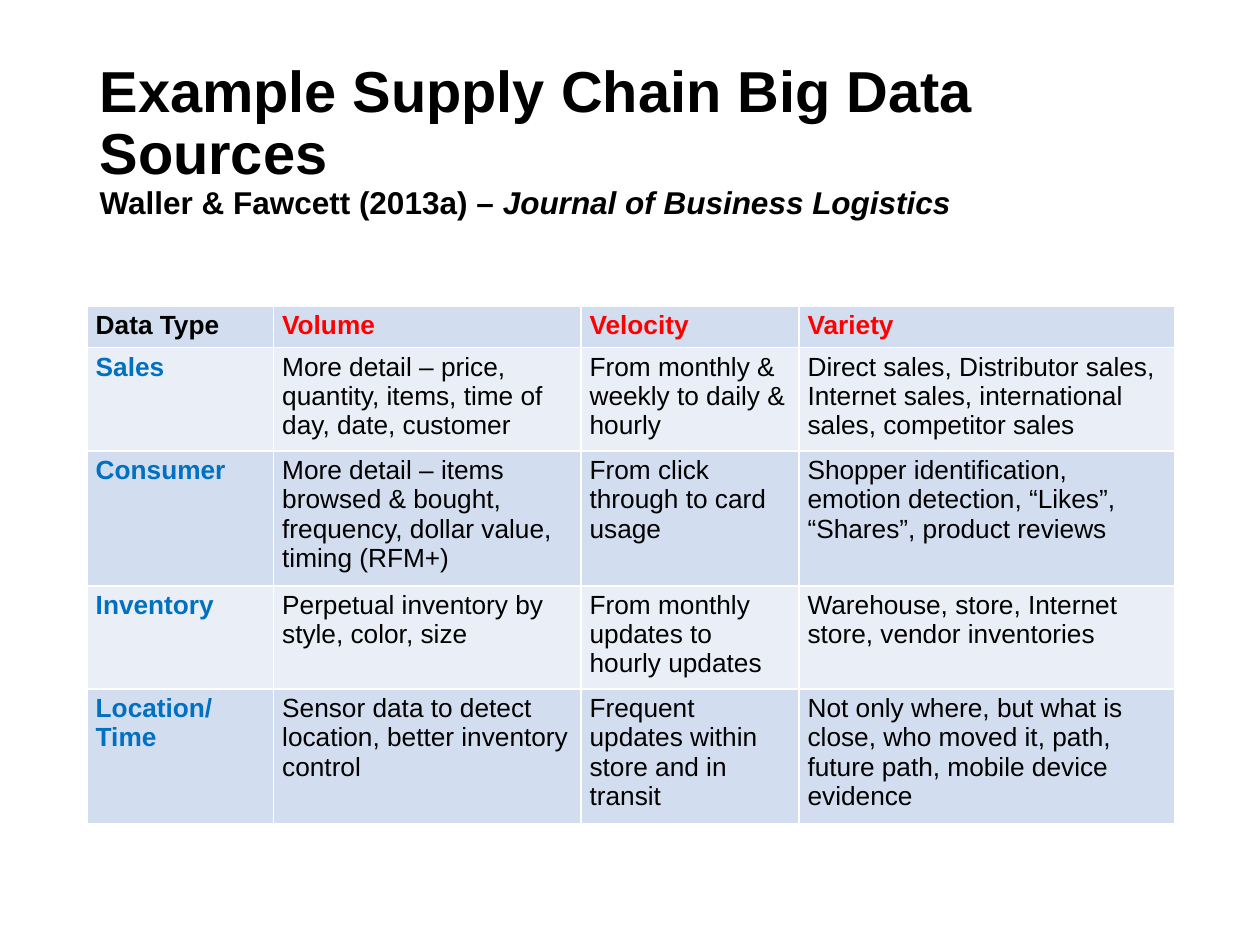
import pptx
import pptx.util
import pptx.dml.color
import pptx.enum.text
from dataclasses import dataclass
from lxml import etree


@dataclass(frozen=True)
class Theme:
    font: str = "Arial"
    title_size: int = 33
    source_size: int = 18
    table_size: int = 15
    ink: str = "000000"
    heading: str = "FF0000"
    row_label: str = "0070C0"
    bands: tuple = ("D2DEEF", "EAEFF7")
    rule: str = "FFFFFF"


THEME = Theme()
LEFT = 0.69
COLUMN_WIDTHS = (1.48, 2.44, 1.73, 2.98)
ROW_HEIGHTS = (0.33, 0.82, 1.07, 0.82, 1.07)

DATA_SOURCES = (
    ("Data Type", "Volume", "Velocity", "Variety"),
    ("Sales",
     "More detail – price, quantity, items, time of day, date, customer",
     "From monthly & weekly to daily & hourly",
     "Direct sales, Distributor sales, Internet sales, international sales, "
     "competitor sales"),
    ("Consumer",
     "More detail – items browsed & bought, frequency, dollar value, "
     "timing (RFM+)",
     "From click through to card usage",
     "Shopper identification, emotion detection, “Likes”, “Shares”, "
     "product reviews"),
    ("Inventory",
     "Perpetual inventory by style, color, size",
     "From monthly updates to hourly updates",
     "Warehouse, store, Internet store, vendor inventories"),
    ("Location/Time",
     "Sensor data to detect location, better inventory control",
     "Frequent updates within store and in transit",
     "Not only where, but what is close, who moved it, path, future path, "
     "mobile device evidence"),
)


def inches(*lengths):
    return [pptx.util.Inches(length) for length in lengths]


def rgb(code):
    return pptx.dml.color.RGBColor.from_string(code)


def style_font(font, color, bold):
    font.name = THEME.font
    font.bold = bold
    font.color.rgb = rgb(color)


def add_title(slide):
    title = slide.shapes.title
    title.left, title.top, title.width, title.height = inches(LEFT, 0.4, 7.55, 1.45)
    frame = title.text_frame
    frame.word_wrap = True
    frame.auto_size = pptx.enum.text.MSO_AUTO_SIZE.NONE
    frame.vertical_anchor = pptx.enum.text.MSO_ANCHOR.MIDDLE

    heading = frame.paragraphs[0]
    heading.alignment = pptx.enum.text.PP_ALIGN.LEFT
    heading.line_spacing = 0.9
    style_font(heading.font, THEME.ink, True)

    topic = heading.add_run()
    topic.text = "Example Supply Chain Big Data Sources"
    topic.font.size = pptx.util.Pt(THEME.title_size)
    heading.add_line_break()
    for words, italic in (("Waller & Fawcett (2013a) – ", False),
                          ("Journal of Business Logistics", True)):
        citation = heading.add_run()
        citation.text = words
        citation.font.size = pptx.util.Pt(THEME.source_size)
        citation.font.italic = italic


def add_cell_borders(cell):
    """Rule all four sides; borders must come before the fill."""
    properties = cell._tc.get_or_add_tcPr()
    namespace = pptx.oxml.ns.nsdecls("a")
    for position, side in enumerate(("lnL", "lnR", "lnT", "lnB")):
        border = etree.tostring(pptx.oxml.parse_xml(
            f'<a:{side} {namespace} w="12700"><a:solidFill>'
            f'<a:srgbClr val="{THEME.rule}"/></a:solidFill></a:{side}>'))
        properties.insert(position, pptx.oxml.parse_xml(border))


def cell_style(row, column):
    """Text colour and weight from the cell's place in the table."""
    if row == 0:
        return (THEME.heading if column else THEME.ink), True
    return (THEME.ink, False) if column else (THEME.row_label, True)


def fill_cell(cell, words, row, column):
    cell.margin_left, cell.margin_right = inches(0.07, 0.07)
    cell.margin_top, cell.margin_bottom = inches(0.04, 0.04)
    cell.fill.solid()
    cell.fill.fore_color.rgb = rgb(THEME.bands[row % 2])
    add_cell_borders(cell)
    cell.text = words
    entry = cell.text_frame.paragraphs[0]
    entry.font.size = pptx.util.Pt(THEME.table_size)
    style_font(entry.font, *cell_style(row, column))


def add_sources_table(slide):
    area = inches(LEFT, 2.43, sum(COLUMN_WIDTHS), sum(ROW_HEIGHTS))
    table = slide.shapes.add_table(len(ROW_HEIGHTS), len(COLUMN_WIDTHS), *area).table
    for column, width in zip(table.columns, inches(*COLUMN_WIDTHS)):
        column.width = width
    for row, height in zip(table.rows, inches(*ROW_HEIGHTS)):
        row.height = height
    for row, entries in enumerate(DATA_SOURCES):
        for column, words in enumerate(entries):
            fill_cell(table.cell(row, column), words, row, column)


def main():
    deck = pptx.Presentation()
    deck.slide_width, deck.slide_height = inches(10, 7.5)
    slide = deck.slides.add_slide(deck.slide_layouts[5])  # Title Only
    add_title(slide)
    add_sources_table(slide)
    deck.save("out.pptx")


if __name__ == "__main__":
    main()
